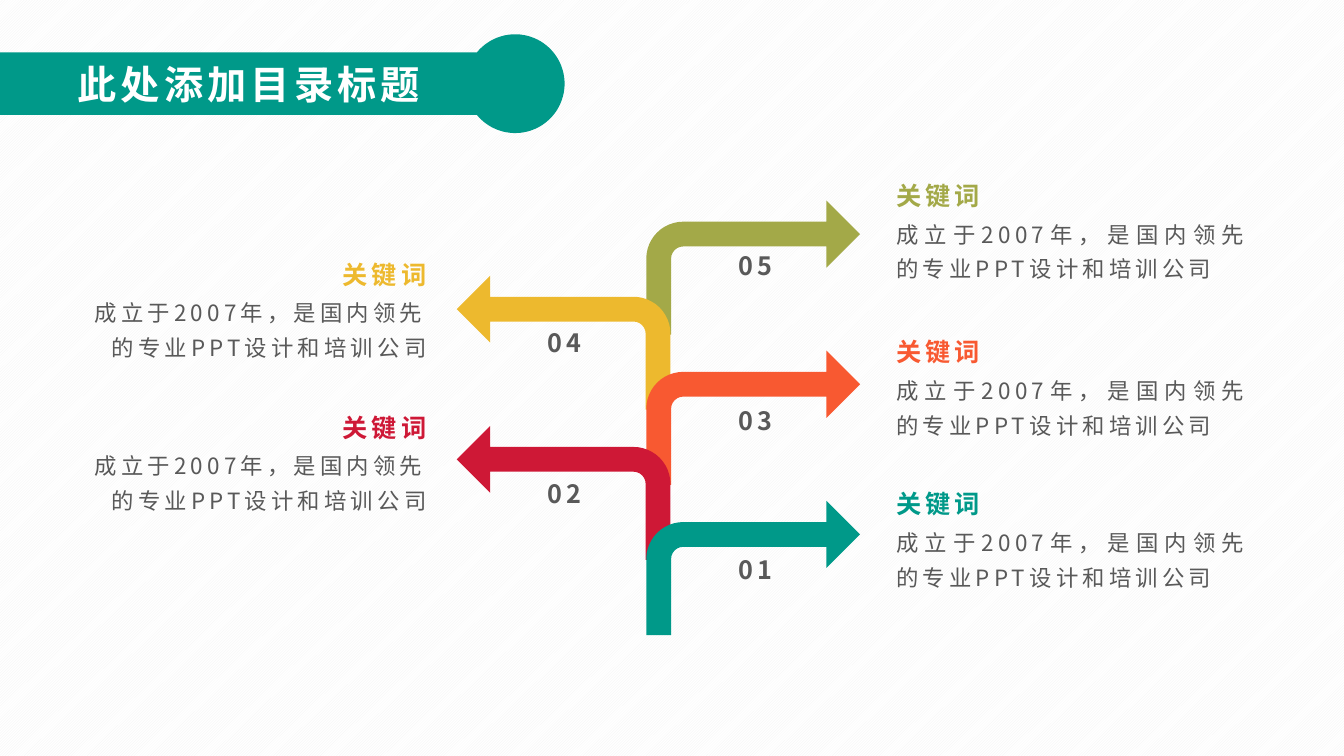
from dataclasses import dataclass
from math import asin, cos, pi, sin

from lxml.etree import SubElement
from pptx import Presentation
from pptx.dml.color import RGBColor
from pptx.enum.dml import MSO_PATTERN
from pptx.enum.shapes import MSO_SHAPE
from pptx.enum.text import MSO_AUTO_SIZE, PP_ALIGN
from pptx.oxml.ns import qn
from pptx.shapes.autoshape import Shape
from pptx.slide import Slide
from pptx.util import Inches, Pt


@dataclass(frozen=True)
class Theme:
    """Colours and type of the slide."""
    font: str = "Noto Sans CJK SC"
    teal: str = "009989"
    red: str = "CE1836"
    orange: str = "F85931"
    yellow: str = "EDB92E"
    olive: str = "A3A948"
    grey: str = "595959"
    white: str = "FFFFFF"
    stripe: str = "F2F2F2"
    title_size: int = 28
    heading_size: int = 18
    body_size: int = 16
    letter_spacing: int = 300


@dataclass(frozen=True)
class Branch:
    """One arrow of the tree with its number and heading position."""
    number: str
    color: str
    heading_top: float
    number_top: float
    points_left: bool = False


@dataclass(frozen=True)
class Side:
    """Horizontal layout shared by the branches on one side."""
    arrow_left: float
    number_left: float
    heading_left: float
    body_left: float
    body_width: float
    alignment: PP_ALIGN


THEME = Theme()
TITLE = "此处添加目录标题"
HEADING = "关键词"
BODY = "成立于2007年，是国内领先的专业PPT设计和培训公司"
LEFT = Side(4.53, 5.22, 3.1, 0.6, 3.73, PP_ALIGN.RIGHT)
RIGHT = Side(6.41, 7.12, 8.79, 8.79, 3.69, PP_ALIGN.JUSTIFY)
BRANCHES = [
    Branch("05", THEME.olive, 1.65, 2.43),
    Branch("04", THEME.yellow, 2.43, 3.2, True),
    Branch("03", THEME.orange, 3.2, 3.97),
    Branch("02", THEME.red, 3.95, 4.7, True),
    Branch("01", THEME.teal, 4.71, 5.45),
]
FIRST_ARROW_TOP = 1.99
ARROW_STEP = 0.745
BODY_OFFSET = 0.41


def paint(shape: Shape, color: str) -> None:
    """Give a shape a flat fill without line or shadow."""
    shape.shadow.inherit = False
    shape.fill.solid()
    shape.fill.fore_color.rgb = RGBColor.from_string(color)
    shape.line.fill.background()


def add_text(slide: Slide, text: str, left: float, top: float, width: float, height: float,
             size: int, color: str, alignment: PP_ALIGN, bold: bool = True,
             line_spacing: float = 1.0) -> None:
    """Add a wrapped, letter-spaced text box."""
    box = slide.shapes.add_textbox(Inches(left), Inches(top), Inches(width), Inches(height))
    frame = box.text_frame
    frame.text = text
    frame.word_wrap = True
    frame.auto_size = MSO_AUTO_SIZE.SHAPE_TO_FIT_TEXT
    paragraph = frame.paragraphs[0]
    paragraph.alignment = alignment
    paragraph.line_spacing = line_spacing
    run = paragraph.runs[0]
    run.font.size = Pt(size)
    run.font.bold = bold
    run.font.color.rgb = RGBColor.from_string(color)
    run.font.name = THEME.font
    properties = run._r.get_or_add_rPr()
    properties.set("spc", str(THEME.letter_spacing))
    SubElement(properties, qn("a:ea"), typeface=THEME.font)


def add_arrow(slide: Slide, branch: Branch, side: Side, top: float) -> None:
    """Add the bent arrow of a branch."""
    arrow = slide.shapes.add_shape(MSO_SHAPE.BENT_ARROW, Inches(side.arrow_left), Inches(top),
                                   Inches(2.12), Inches(1.33))
    for index, value in enumerate((0.185, 0.25, 0.25, 0.276)):
        arrow.adjustments[index] = value
    if branch.points_left:
        arrow._element.spPr.xfrm.set("flipH", "1")
    paint(arrow, branch.color)


def add_labels(slide: Slide, branch: Branch, side: Side) -> None:
    """Add the body, heading and number of a branch."""
    add_text(slide, BODY, side.body_left, branch.heading_top + BODY_OFFSET, side.body_width, 0.79,
             THEME.body_size, THEME.grey, side.alignment, False, 1.3)
    add_text(slide, HEADING, side.heading_left, branch.heading_top, 1.23, 0.49,
             THEME.heading_size, branch.color, side.alignment, True, 1.3)
    add_text(slide, branch.number, side.number_left, branch.number_top, 0.75, 0.4,
             THEME.heading_size, THEME.grey, PP_ALIGN.CENTER)


def add_banner(slide: Slide) -> None:
    """Add the title bar that ends in a disc."""
    center_x, center_y, radius, half_bar, steps = 5.11, 0.83, 0.49, 0.31, 90
    joint = asin(half_bar / radius)
    sweep = 2 * (pi - joint)
    angles = [pi + joint + sweep * step / steps for step in range(steps + 1)]
    outline = [(Inches(center_x + radius * cos(angle)), Inches(center_y + radius * sin(angle)))
               for angle in angles]
    outline.append((Inches(0), Inches(center_y + half_bar)))
    builder = slide.shapes.build_freeform(Inches(0), Inches(center_y - half_bar))
    builder.add_line_segments(outline, close=True)
    paint(builder.convert_to_shape(), THEME.teal)


def main() -> None:
    """Build and save the slide."""
    presentation = Presentation()
    presentation.slide_width = Inches(13.33)
    presentation.slide_height = Inches(7.5)
    slide = presentation.slides.add_slide(presentation.slide_layouts[6])
    background = slide.background.fill
    background.patterned()
    background.pattern = MSO_PATTERN.LIGHT_UPWARD_DIAGONAL
    background.fore_color.rgb = RGBColor.from_string(THEME.stripe)
    background.back_color.rgb = RGBColor.from_string(THEME.white)
    sides = [LEFT if branch.points_left else RIGHT for branch in BRANCHES]
    for index, (branch, side) in enumerate(zip(BRANCHES, sides)):
        add_arrow(slide, branch, side, FIRST_ARROW_TOP + index * ARROW_STEP)
    for branch, side in zip(BRANCHES, sides):
        add_labels(slide, branch, side)
    add_banner(slide)
    add_text(slide, TITLE, 0.67, 0.55, 3.93, 0.57, THEME.title_size, THEME.white, PP_ALIGN.LEFT)
    presentation.save("out.pptx")


if __name__ == "__main__":
    main()
